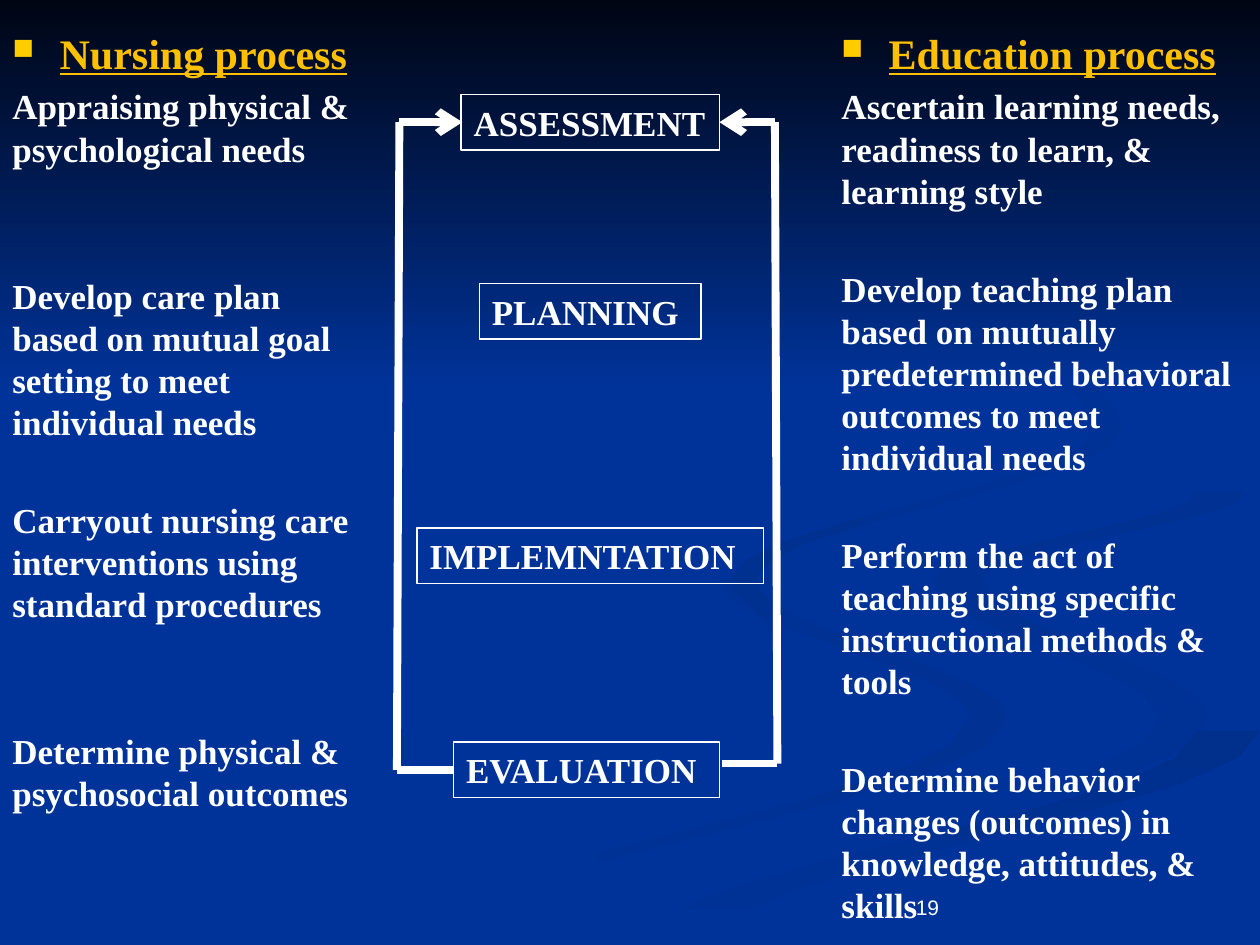
from math import cos, pi
from pptx import Presentation
from pptx.util import Inches, Pt
from pptx.dml.color import RGBColor as RGB
from pptx.enum.shapes import MSO_SHAPE as SHAPE, MSO_CONNECTOR as CONN
from pptx.enum.text import MSO_ANCHOR as ANCHOR
from lxml import etree

C = {"blue": "003399", "night": "000514", "shade": "003193", "deep": "002F8C",
     "white": "FFFFFF", "gold": "FFC000", "bullet": "FFCC00"}
NS = "http://schemas.openxmlformats.org/drawingml/2006/main"

prs = Presentation()
prs.slide_width, prs.slide_height = Inches(10), Inches(7.5)
COL, ROW = prs.slide_width // 100, prs.slide_height // 75
s = prs.slides.add_slide(prs.slide_layouts[6])
s.background.fill.solid()
s.background.fill.fore_color.rgb = RGB.from_string(C["blue"])


def paint(sp, start, end, angle):
    sp.shadow.inherit = False
    sp.line.fill.background()
    sp.fill.gradient()
    sp.fill.gradient_angle = 360 - angle
    for stop, name in zip(sp.fill.gradient_stops, (start, end)):
        stop.color.rgb = RGB.from_string(C[name])


def write(p, text, size, color="white", font="Times New Roman", bold=True):
    p.text = text
    f = p.runs[0].font
    f.size, f.name, f.bold = Pt(size), font, bold
    f.color.rgb = RGB.from_string(C[color])
    return f


ribbons = [("blue", "shade", 0, 3, [(57, 46), (77, 57), (31, 75)]),
           ("shade", "blue", 90, 4, [(95, 39), (74, 46), (92, 57), (48, 75)]),
           ("deep", "blue", 90, 5, [(95, 58), (51, 75)]),
           ("deep", "blue", 45, 2, [(76, 23), (87, 34), (58, 46), (61, 50)])]
STEPS = 8
for start, end, angle, width, turns in ribbons:
    edge = [(x1 + (x2 - x1) * (1 - cos(pi * i / STEPS)) / 2, y1 + (y2 - y1) * i / STEPS)
            for (x1, y1), (x2, y2) in zip(turns, turns[1:]) for i in range(STEPS + 1)]
    outline = edge + [(x + width, y) for x, y in reversed(edge)]
    pts = [(x * COL, y * ROW) for x, y in outline]
    fb = s.shapes.build_freeform(*pts[0])
    fb.add_line_segments(pts[1:], close=True)
    paint(fb.convert_to_shape(), start, end, angle)

sky = s.shapes.add_shape(SHAPE.RECTANGLE, 0, 0, prs.slide_width, round(30.8 * ROW))
paint(sky, "night", "blue", 90)

columns = [
    (0, 30, "Nursing process", [
        ("Appraising physical & psychological needs", 4),
        ("Develop care plan based on mutual goal setting to meet individual needs", 60),
        ("Carryout nursing care interventions using standard procedures", 32),
        ("Determine physical & psychosocial outcomes", 60)]),
    (65.8, 34.2, "Education process", [
        ("Ascertain learning needs, readiness to learn, & learning style", 4),
        ("Develop teaching plan based on mutually predetermined behavioral "
         "outcomes to meet individual needs", 32),
        ("Perform the act of teaching using specific instructional methods & tools", 32),
        ("Determine behavior changes (outcomes) in knowledge, attitudes, & skills", 32)]),
]
for x, w, title, steps in columns:
    tf = s.shapes.add_textbox(round(x * COL), round(1.7 * ROW), round(w * COL), 70 * ROW).text_frame
    tf.word_wrap = True
    p = tf.paragraphs[0]
    write(p, title, 24, "gold").underline = True
    p.space_before = Pt(4.8)
    pPr = p._p.get_or_add_pPr()
    pPr.set("marL", str(round(3.75 * COL)))
    pPr.set("indent", str(round(-3.75 * COL)))
    color = etree.SubElement(pPr, f"{{{NS}}}buClr")
    etree.SubElement(color, f"{{{NS}}}srgbClr", val=C["bullet"])
    etree.SubElement(pPr, f"{{{NS}}}buSzPct", val="70000")
    etree.SubElement(pPr, f"{{{NS}}}buChar", char="■")
    for text, gap in steps:
        p = tf.add_paragraph()
        write(p, text, 20)
        p.space_before = Pt(gap)

stages = [("ASSESSMENT", 36.6, 7.5, 20.5), ("PLANNING", 38.05, 22.5, 17.6),
          ("IMPLEMNTATION", 33.1, 41.9, 27.5), ("EVALUATION", 36, 58.9, 21.1)]
for text, x, y, w in stages:
    sp = s.shapes.add_textbox(round(x * COL), round(y * ROW), round(w * COL), round(4.4 * ROW))
    sp.line.color.rgb = RGB.from_string(C["white"])
    sp.line.width = Pt(0.75)
    tf = sp.text_frame
    tf.word_wrap = True
    tf.margin_right = 0
    tf.vertical_anchor = ANCHOR.MIDDLE
    write(tf.paragraphs[0], text, 20)

loops = [[(57.3, 60.6), (61.7, 60.6), (61.5, 9.7), (57.1, 9.7)],
         [(36, 61.1), (31.5, 61.1), (31.7, 9.7), (36.7, 9.7)]]
for route in loops:
    for i, ((x1, y1), (x2, y2)) in enumerate(zip(route, route[1:])):
        ln = s.shapes.add_connector(CONN.STRAIGHT, round(x1 * COL), round(y1 * ROW),
                                    round(x2 * COL), round(y2 * ROW))
        ln.line.color.rgb = RGB.from_string(C["white"])
        ln.line.width = Pt(4.5)
        if i == 2:
            etree.SubElement(ln.line._get_or_add_ln(), f"{{{NS}}}tailEnd", type="arrow")
        etree.SubElement(ln._element.spPr, f"{{{NS}}}effectLst")

tf = s.shapes.add_textbox(round(71.7 * COL), round(68.3 * ROW),
                          round(23.3 * COL), round(5.2 * ROW)).text_frame
tf.word_wrap = True
tf.vertical_anchor = ANCHOR.BOTTOM
write(tf.paragraphs[0], "19", 12, font="Arial", bold=False)

prs.save("out.pptx")
